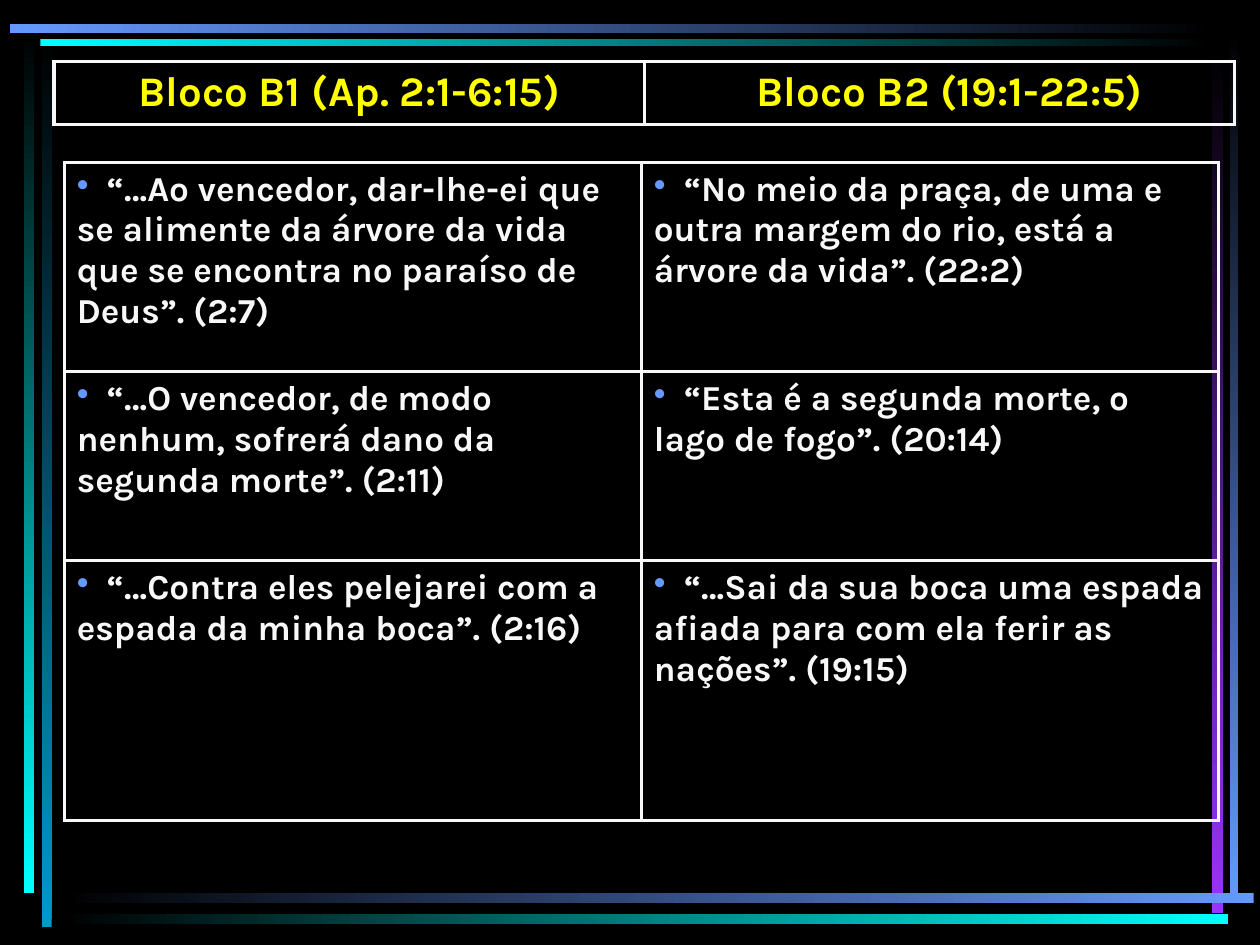
from lxml.etree import SubElement
from pptx import Presentation
from pptx.dml.color import RGBColor
from pptx.enum.shapes import MSO_SHAPE
from pptx.enum.text import PP_ALIGN
from pptx.oxml.ns import qn
from pptx.util import Inches, Pt

BLACK = RGBColor(0x00, 0x00, 0x00)
WHITE = RGBColor(0xF8, 0xF8, 0xF8)
YELLOW = RGBColor(0xFF, 0xFF, 0x00)
CYAN = RGBColor(0x00, 0xFF, 0xFF)
TEAL = RGBColor(0x00, 0x99, 0xCC)
BLUE = RGBColor(0x66, 0x99, 0xFF)
PURPLE = RGBColor(0x99, 0x33, 0xFF)
FONT = "Karla"

# Content
HEADINGS = [["Bloco B1 (Ap. 2:1-6:15)", "Bloco B2 (19:1-22:5)"]]
VERSES = [
    ["“…Ao vencedor, dar-lhe-ei que se alimente da árvore da vida "
     "que se encontra no paraíso de Deus”. (2:7)",
     "“No meio da praça, de uma e outra margem do rio, está a árvore da vida”. (22:2)"],
    ["“…O vencedor, de modo nenhum, sofrerá dano da segunda morte”. (2:11)",
     "“Esta é a segunda morte, o lago de fogo”. (20:14)"],
    ["“…Contra eles pelejarei com a espada da minha boca”. (2:16)",
     "“…Sai da sua boca uma espada afiada para com ela ferir as nações”. (19:15)"],
]

# Frame bars: left, top, width, height, colour, angle from bright end to black
UP, RIGHTWARD, LEFTWARD = 90, 0, 180
BARS = [
    (0.33, 0.28, 0.08, 7.08, TEAL, UP),
    (0.19, 0.25, 0.08, 6.84, CYAN, UP),
    (9.76, 0.24, 0.07, 6.93, BLUE, UP),
    (9.62, 0.42, 0.09, 6.83, PURPLE, UP),
    (0.45, 7.09, 9.5, 0.08, BLUE, LEFTWARD),
    (0.45, 7.25, 9.3, 0.08, CYAN, LEFTWARD),
    (0.32, 0.31, 9.32, 0.06, CYAN, RIGHTWARD),
    (0.08, 0.19, 9.56, 0.07, BLUE, RIGHTWARD),
]


def add_bar(slide, left, top, width, height, colour, angle):
    bar = slide.shapes.add_shape(
        MSO_SHAPE.RECTANGLE, Inches(left), Inches(top), Inches(width), Inches(height))
    bar.shadow.inherit = False
    bar.line.fill.background()
    bar.fill.gradient()
    bar.fill.gradient_angle = angle
    for stop, stop_colour in zip(bar.fill.gradient_stops, (colour, BLACK)):
        stop.color.rgb = stop_colour


def add_solid(parent, colour):
    SubElement(SubElement(parent, qn("a:solidFill")), qn("a:srgbClr"), val=str(colour))


def add_borders(cell):
    cell.fill.background()
    properties = cell.fill._xPr
    for position, side in enumerate(("a:lnL", "a:lnR", "a:lnT", "a:lnB")):
        line = SubElement(properties, qn(side), w=str(Pt(2.25)))
        add_solid(line, WHITE)
        properties.insert(position, line)


def format_paragraph(paragraph, size, colour, bullet):
    font = paragraph.runs[0].font
    font.name, font.size, font.bold = FONT, Pt(size), True
    font.color.rgb = colour
    properties = paragraph._p.get_or_add_pPr()
    SubElement(SubElement(properties, qn("a:spcBef")), qn("a:spcPct"), val="20000")
    if bullet:
        properties.set("marL", "0")
        properties.set("indent", "0")
        bullet_colour = SubElement(properties, qn("a:buClr"))
        SubElement(bullet_colour, qn("a:srgbClr"), val=str(BLUE))
        SubElement(properties, qn("a:buChar"), char="•")
    else:
        paragraph.alignment = PP_ALIGN.CENTER


def add_grid(slide, rows, left, top, width, heights, size, colour, bullet=False):
    columns = len(rows[0])
    table = slide.shapes.add_table(
        len(rows), columns, Inches(left), Inches(top),
        Inches(width), Inches(sum(heights))).table
    table.first_row = table.horz_banding = False
    for row, height in zip(table.rows, heights):
        row.height = Inches(height)
    for row_index, texts in enumerate(rows):
        for column_index, text in enumerate(texts):
            cell = table.cell(row_index, column_index)
            # The bullet has no hanging indent, so the text itself stands off from it
            cell.text_frame.text = f"  {text}" if bullet else text
            format_paragraph(cell.text_frame.paragraphs[0], size, colour, bullet)
            add_borders(cell)
    return table


def main():
    presentation = Presentation()
    presentation.slide_width, presentation.slide_height = Inches(10), Inches(7.5)
    slide = presentation.slides.add_slide(presentation.slide_layouts[6])
    slide.background.fill.solid()
    slide.background.fill.fore_color.rgb = BLACK

    for bar in BARS:
        add_bar(slide, *bar)

    # Verses, then the heading row above them
    add_grid(slide, VERSES, 0.51, 1.29, 9.16, [1.66, 1.5, 2.06], 20, WHITE, bullet=True)
    headings = add_grid(slide, HEADINGS, 0.43, 0.49, 9.37, [0.5], 24, YELLOW)
    headings.cell(0, 1).margin_left = Inches(0.26)

    presentation.save("out.pptx")


if __name__ == "__main__":
    main()
